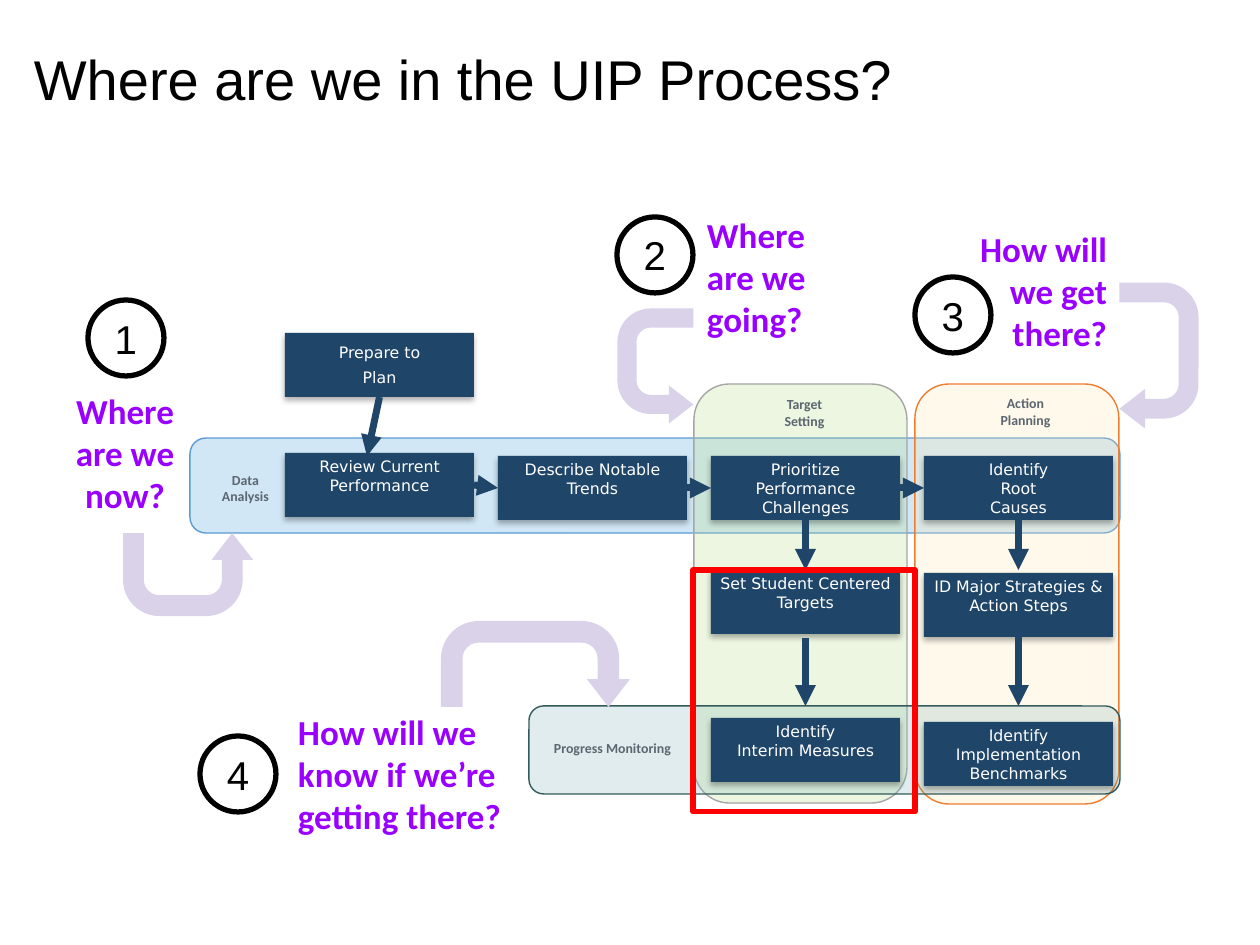
from lxml import etree
from pptx import Presentation
from pptx.dml.color import RGBColor
from pptx.enum.shapes import MSO_CONNECTOR, MSO_SHAPE
from pptx.enum.text import MSO_ANCHOR, PP_ALIGN
from pptx.oxml import parse_xml
from pptx.oxml.ns import nsdecls, qn
from pptx.util import Emu, Pt

LINE = MSO_CONNECTOR.STRAIGHT
RECT, ROUND = MSO_SHAPE.RECTANGLE, MSO_SHAPE.ROUNDED_RECTANGLE
OVAL, UTURN = MSO_SHAPE.OVAL, MSO_SHAPE.U_TURN_ARROW
TOP, MID = MSO_ANCHOR.TOP, MSO_ANCHOR.MIDDLE
LEFT, CENTER, RIGHT = PP_ALIGN.LEFT, PP_ALIGN.CENTER, PP_ALIGN.RIGHT

BLACK = RGBColor(0x00, 0x00, 0x00)
WHITE = RGBColor(0xFF, 0xFF, 0xFF)
NAVY = RGBColor(0x1F, 0x45, 0x69)
GRAY = RGBColor(0x5C, 0x66, 0x70)
PURPLE = RGBColor(0x99, 0x00, 0xFF)
LILAC = RGBColor(0xD9, 0xD2, 0xE9)
RED = RGBColor(0xFF, 0x00, 0x00)
SKY, BLUE = RGBColor(0xD1, 0xE7, 0xF5), RGBColor(0x5B, 0x9B, 0xD5)
CREAM, ORANGE = RGBColor(0xFF, 0xE8, 0xB5), RGBColor(0xED, 0x7D, 0x31)
GREEN, SILVER = RGBColor(0xB9, 0xDC, 0x8A), RGBColor(0xA5, 0xA5, 0xA5)
TEAL, PINE = RGBColor(0x85, 0xB7, 0xB9), RGBColor(0x34, 0x5A, 0x5B)

SCALE = 914400 / 126
BOX_W, BOX_H = 189, 64
COLS = [285 + 213 * i for i in range(4)]
BEND = (0.251, 0.25, 0.323, 0.438, 1)
SHADOW = (f'<a:outerShdw {nsdecls("a")} blurRad="44450" dist="27940" dir="5400000"'
          ' rotWithShape="0"><a:srgbClr val="000000"><a:alpha val="31000"/>'
          '</a:srgbClr></a:outerShdw>')


def px(*vals):
    return [Emu(round(v * SCALE)) for v in vals]


def put_text(shape, text, size, face, color, align=CENTER, anchor=TOP,
             pad=(8, 4), bold=False):
    frame = shape.text_frame
    frame.word_wrap = True
    frame.vertical_anchor = anchor
    side, edge = px(*pad)
    frame.margin_left = frame.margin_right = side
    frame.margin_top = frame.margin_bottom = edge
    frame.text = text
    for para in frame.paragraphs:
        para.alignment = align
        for run in para.runs:
            font = run.font
            font.size, font.name, font.bold = Pt(size), face, bold
            font.color.rgb = color


def add_text(slide, at, *args, **style):
    put_text(slide.shapes.add_textbox(*px(*at)), *args, **style)


def add_form(slide, kind, at, fill=None, line=None, width=1, alpha=None):
    shape = slide.shapes.add_shape(kind, *px(*at))
    shape.shadow.inherit = False
    if fill is None:
        shape.fill.background()
    else:
        shape.fill.solid()
        shape.fill.fore_color.rgb = fill
    if alpha:
        tint = shape.fill._xPr.find(qn("a:solidFill"))[0]
        etree.SubElement(tint, qn("a:alpha")).set("val", str(alpha * 1000))
    if line is None:
        shape.line.fill.background()
    else:
        shape.line.color.rgb = line
        shape.line.width = Pt(width)
    return shape


def add_lane(slide, at, fill, line, alpha=None):
    add_form(slide, ROUND, at, fill, line, 0.79, alpha)


def add_label(slide, at, text, anchor=TOP):
    add_text(slide, at, text, 7.9, "Calibri", GRAY, anchor=anchor, bold=True)


def add_box(slide, col, top, text, anchor=TOP):
    box = add_form(slide, RECT, (COLS[col], top, BOX_W, BOX_H), NAVY)
    box._element.spPr.find(qn("a:effectLst")).append(parse_xml(SHADOW))
    put_text(box, text, 9, "DejaVu Sans", WHITE, anchor=anchor)
    return box


def add_arrow(slide, start, end, side=2):
    """Draw an arrow; each end is a point or a box joined at a side."""
    points = [p if isinstance(p, tuple) else (0, 0) for p in (start, end)]
    arrow = slide.shapes.add_connector(LINE, *px(*points[0], *points[1]))
    if not isinstance(start, tuple):
        arrow.begin_connect(start, side)
    if not isinstance(end, tuple):
        arrow.end_connect(end, 1 if side == 3 else 0)
    arrow.line.color.rgb = NAVY
    arrow.line.width = Pt(4)
    props = arrow._element.spPr
    tail = etree.SubElement(props.find(qn("a:ln")), qn("a:tailEnd"))
    tail.set("type", "triangle")
    etree.SubElement(props, qn("a:effectLst"))


def add_turn(slide, at, angle=0, flip=False):
    turn = add_form(slide, UTURN, at, LILAC)
    for i, value in enumerate(BEND):
        turn.adjustments[i] = value
    turn.rotation = angle
    if flip:
        turn._element.spPr.xfrm.set("flipH", "1")


def add_step(slide, num, spot, at, text, align):
    """Add a numbered circle and its question."""
    add_text(slide, at, text, 20, "Calibri", PURPLE, align=align,
             pad=(13, 13), bold=True)
    disc = add_form(slide, OVAL, (*spot, 76, 76), None, BLACK, 3)
    put_text(disc, str(num), 23, "Arial", BLACK, anchor=MID, pad=(13, 13))


def add_flow(slide):
    trends = add_box(slide, 1, 456, "Describe Notable\vTrends")
    rank = add_box(slide, 2, 456, "Prioritize Performance Challenges")
    goals = add_box(slide, 2, 570, "Set Student Centered Targets")
    add_box(slide, 2, 718, "Identify\vInterim Measures")
    plan = add_box(slide, 3, 573, "ID Major Strategies & Action Steps")
    add_box(slide, 3, 722, "Identify Implementation Benchmarks")
    prep = add_box(slide, 0, 333, "Prepare to\nPlan", MID)
    prep.text_frame.paragraphs[1].space_before = Pt(3.4)
    review = add_box(slide, 0, 453, "Review Current Performance")
    cause = add_box(slide, 3, 456, "Identify\vRoot\vCauses")

    row = [review, trends, rank, cause]
    for start, end in zip(row, row[1:]):
        add_arrow(slide, start, end, 3)
    mids = [left + BOX_W / 2 for left in COLS]
    add_arrow(slide, prep, (367, 456))
    add_arrow(slide, rank, goals)
    add_arrow(slide, (mids[2], 638), (mids[2], 706))
    add_arrow(slide, cause, (mids[3], 570))
    add_arrow(slide, plan, (mids[3], 706))


def main():
    prs = Presentation()
    prs.slide_width, prs.slide_height = px(1260, 945)
    slide = prs.slides.add_slide(prs.slide_layouts[6])
    add_text(slide, (34, 45, 1186, 78), "Where are we in the UIP Process?",
             32, "Arial", BLACK, align=LEFT, pad=(0, 0))

    add_lane(slide, (190, 438, 930, 95), SKY, BLUE)
    add_label(slide, (190, 456, 111, 64), "Data\nAnalysis", MID)
    add_lane(slide, (915, 384, 204, 420), CREAM, ORANGE, 25)
    add_lane(slide, (694, 384, 213, 419), GREEN, SILVER, 25)
    add_label(slide, (732, 392, 145, 53), "Target\nSetting")
    add_lane(slide, (529, 706, 591, 88), TEAL, PINE, 25)
    add_label(slide, (538, 716, 149, 64), "Progress Monitoring", MID)
    add_label(slide, (955, 391, 141, 40), "Action\nPlanning")

    add_flow(slide)

    add_turn(slide, (123, 533, 130, 83), 180, True)
    add_turn(slide, (598, 328, 115, 76), 270, True)
    add_turn(slide, (1086, 316, 146, 79), 90)
    add_turn(slide, (441, 621, 189, 86))

    steps = [
        ((88, 300), (60, 376, 130, 152), "Where are we now?", CENTER),
        ((617, 217), (694, 200, 130, 152), "Where are we going?", LEFT),
        ((915, 277), (963, 214, 157, 152), "How will we get there?", RIGHT),
        ((200, 736), (285, 697, 236, 152),
         "How will we know if we’re getting there?", LEFT),
    ]
    for num, step in enumerate(steps, 1):
        add_step(slide, num, *step)
    add_form(slide, RECT, (693, 570, 222, 242), None, RED, 3)
    prs.save("out.pptx")


if __name__ == "__main__":
    main()
